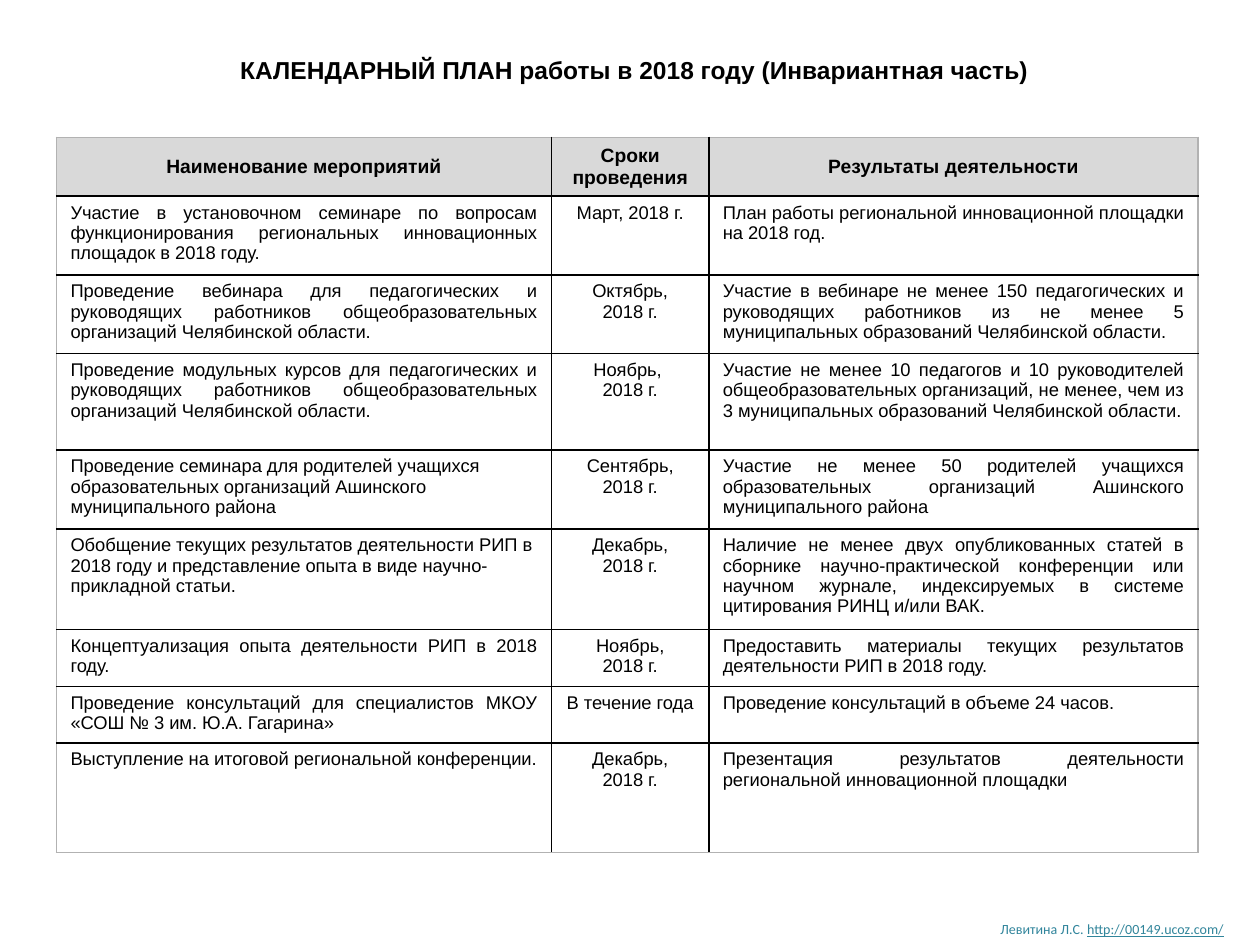
from dataclasses import dataclass

from lxml.etree import SubElement
from pptx import Presentation
from pptx.dml.color import RGBColor
from pptx.enum.text import MSO_ANCHOR, MSO_AUTO_SIZE, PP_ALIGN
from pptx.oxml.ns import qn
from pptx.util import Inches, Pt

GRID_COLUMNS, GRID_ROWS = 100, 75


@dataclass(frozen=True)
class Theme:
    ink: str = "000000"
    outer_border: str = "B2B2B2"
    header_fill: str = "D9D9D9"
    footer: str = "31859C"
    link: str = "31859B"
    body_font: str = "Arial"
    footer_font: str = "Calibri"
    title_size: float = 14
    header_size: float = 11
    body_size: float = 10.5
    footer_size: float = 8
    border_width: float = 1


@dataclass(frozen=True)
class Box:
    left: float
    top: float
    width: float
    height: float


THEME = Theme()

TITLE = "КАЛЕНДАРНЫЙ ПЛАН работы в 2018 году (Инвариантная часть)"
FOOTER_AUTHOR = "Левитина Л.С. "
FOOTER_ADDRESS = "http://00149.ucoz.com/"
HEADERS = ("Наименование мероприятий", "Сроки\nпроведения", "Результаты деятельности")
EVENTS = (
    ("Участие в установочном семинаре по вопросам функционирования региональных "
     "инновационных площадок в 2018 году.",
     "Март, 2018 г.",
     "План работы региональной инновационной площадки на 2018 год."),
    ("Проведение вебинара для педагогических и руководящих работников "
     "общеобразовательных организаций Челябинской области.",
     "Октябрь,\n2018 г.",
     "Участие в вебинаре не менее 150 педагогических и руководящих работников "
     "из не менее 5 муниципальных образований Челябинской области."),
    ("Проведение модульных курсов для педагогических и руководящих работников "
     "общеобразовательных организаций Челябинской области.",
     "Ноябрь, \n2018 г.",
     "Участие не менее 10 педагогов и 10 руководителей общеобразовательных "
     "организаций, не менее, чем из 3 муниципальных образований Челябинской области."),
    ("Проведение семинара для родителей учащихся образовательных организаций "
     "Ашинского муниципального района",
     "Сентябрь,\n2018 г.",
     "Участие не менее 50 родителей учащихся образовательных организаций "
     "Ашинского муниципального района"),
    ("Обобщение текущих результатов деятельности РИП в 2018 году и представление "
     "опыта в виде научно-прикладной статьи.",
     "Декабрь,\n2018 г.",
     "Наличие не менее двух опубликованных статей в сборнике научно-практической "
     "конференции или научном журнале, индексируемых в системе цитирования "
     "РИНЦ и/или ВАК."),
    ("Концептуализация опыта деятельности РИП в 2018 году. ",
     "Ноябрь,\n2018 г.",
     "Предоставить материалы текущих результатов деятельности РИП в 2018 году."),
    ("Проведение консультаций для специалистов МКОУ «СОШ № 3 им. Ю.А. Гагарина»",
     "В течение года",
     "Проведение консультаций в объеме 24 часов."),
    ("Выступление на итоговой региональной конференции.",
     "Декабрь,\n2018 г.",
     "Презентация результатов деятельности региональной инновационной площадки"),
)
LEFT_ALIGNED_EVENTS = (4, 5)
COLUMN_WIDTHS = (39.27, 12.5, 38.83)
ROW_HEIGHTS = (4.6, 6.25, 6.25, 7.65, 6.25, 8, 4.5, 4.5, 8.7)


def apply_format(target, values):
    for name, value in values.items():
        setattr(target, name, value)


def add_run(paragraph, text, color, **font_values):
    run = paragraph.add_run()
    run.text = text
    apply_format(run.font, font_values)
    run.font.color.rgb = RGBColor.from_string(color)


def add_text_box(slide, box, unit_x, unit_y, wrap):
    shape = slide.shapes.add_textbox(
        int(box.left * unit_x), int(box.top * unit_y),
        int(box.width * unit_x), int(box.height * unit_y))
    apply_format(shape.text_frame,
                 {"word_wrap": wrap, "auto_size": MSO_AUTO_SIZE.SHAPE_TO_FIT_TEXT})
    return shape.text_frame.paragraphs[0]


def add_title(slide, box, unit_x, unit_y):
    paragraph = add_text_box(slide, box, unit_x, unit_y, True)
    paragraph.alignment = PP_ALIGN.CENTER
    add_run(paragraph, TITLE, THEME.ink, name=THEME.body_font,
            size=Pt(THEME.title_size), bold=True)


def add_footer(slide, box, unit_x, unit_y):
    paragraph = add_text_box(slide, box, unit_x, unit_y, False)
    font_values = {"name": THEME.footer_font, "size": Pt(THEME.footer_size)}
    add_run(paragraph, FOOTER_AUTHOR, THEME.footer, **font_values)
    add_run(paragraph, FOOTER_ADDRESS, THEME.link, underline=True, **font_values)
    add_run(paragraph, " ", THEME.footer, **font_values)


def set_borders(cell, row, column):
    properties = cell._tc.get_or_add_tcPr()
    outer_sides = {
        "a:lnL": column == 0, "a:lnR": column == len(HEADERS) - 1,
        "a:lnT": row == 0, "a:lnB": row == len(EVENTS)}
    for position, (side, is_outer) in enumerate(outer_sides.items()):
        line = SubElement(properties, qn(side), w=str(Pt(THEME.border_width)))
        fill = SubElement(line, qn("a:solidFill"))
        color = THEME.outer_border if is_outer else THEME.ink
        SubElement(fill, qn("a:srgbClr"), val=color)
        properties.remove(line)
        properties.insert(position, line)


def cell_alignment(row, column):
    if row == 0 or column == 1:
        return PP_ALIGN.CENTER
    if column == 0 and row in LEFT_ALIGNED_EVENTS:
        return PP_ALIGN.LEFT
    return PP_ALIGN.JUSTIFY


def fill_cell(cell, text, row, column):
    is_header = row == 0
    apply_format(cell, {
        "margin_left": Inches(0.11), "margin_right": Inches(0.11),
        "margin_top": Inches(0.05), "margin_bottom": Inches(0.05),
        "vertical_anchor": MSO_ANCHOR.MIDDLE if is_header else MSO_ANCHOR.TOP})
    if is_header:
        cell.fill.solid()
        cell.fill.fore_color.rgb = RGBColor.from_string(THEME.header_fill)
    else:
        cell.fill.background()
    set_borders(cell, row, column)
    size = THEME.header_size if is_header else THEME.body_size
    for index, line in enumerate(text.split("\n")):
        frame = cell.text_frame
        paragraph = frame.add_paragraph() if index else frame.paragraphs[0]
        paragraph.alignment = cell_alignment(row, column)
        add_run(paragraph, line, THEME.ink, name=THEME.body_font,
                size=Pt(size), bold=is_header)


def add_schedule(slide, box, unit_x, unit_y):
    rows = (HEADERS, *EVENTS)
    table = slide.shapes.add_table(
        len(rows), len(HEADERS), int(box.left * unit_x), int(box.top * unit_y),
        int(box.width * unit_x), int(box.height * unit_y)).table
    apply_format(table, {"first_row": False, "horz_banding": False})
    for column, share in zip(table.columns, COLUMN_WIDTHS):
        column.width = int(box.width * unit_x * share / sum(COLUMN_WIDTHS))
    for row, share in zip(table.rows, ROW_HEIGHTS):
        row.height = int(box.height * unit_y * share / sum(ROW_HEIGHTS))
    for row_index, texts in enumerate(rows):
        for column_index, text in enumerate(texts):
            fill_cell(table.cell(row_index, column_index), text, row_index, column_index)


def main():
    presentation = Presentation()
    apply_format(presentation, {"slide_width": Inches(10), "slide_height": Inches(7.5)})
    slide = presentation.slides.add_slide(presentation.slide_layouts[6])
    units = (presentation.slide_width / GRID_COLUMNS, presentation.slide_height / GRID_ROWS)
    add_footer(slide, Box(78.4, 72.6, 20.2, 2.4), *units)
    add_title(slide, Box(3.9, 3.9, 92.9, 3.4), *units)
    add_schedule(slide, Box(4.5, 10.9, 90.6, 56.7), *units)
    presentation.save("out.pptx")


if __name__ == "__main__":
    main()
